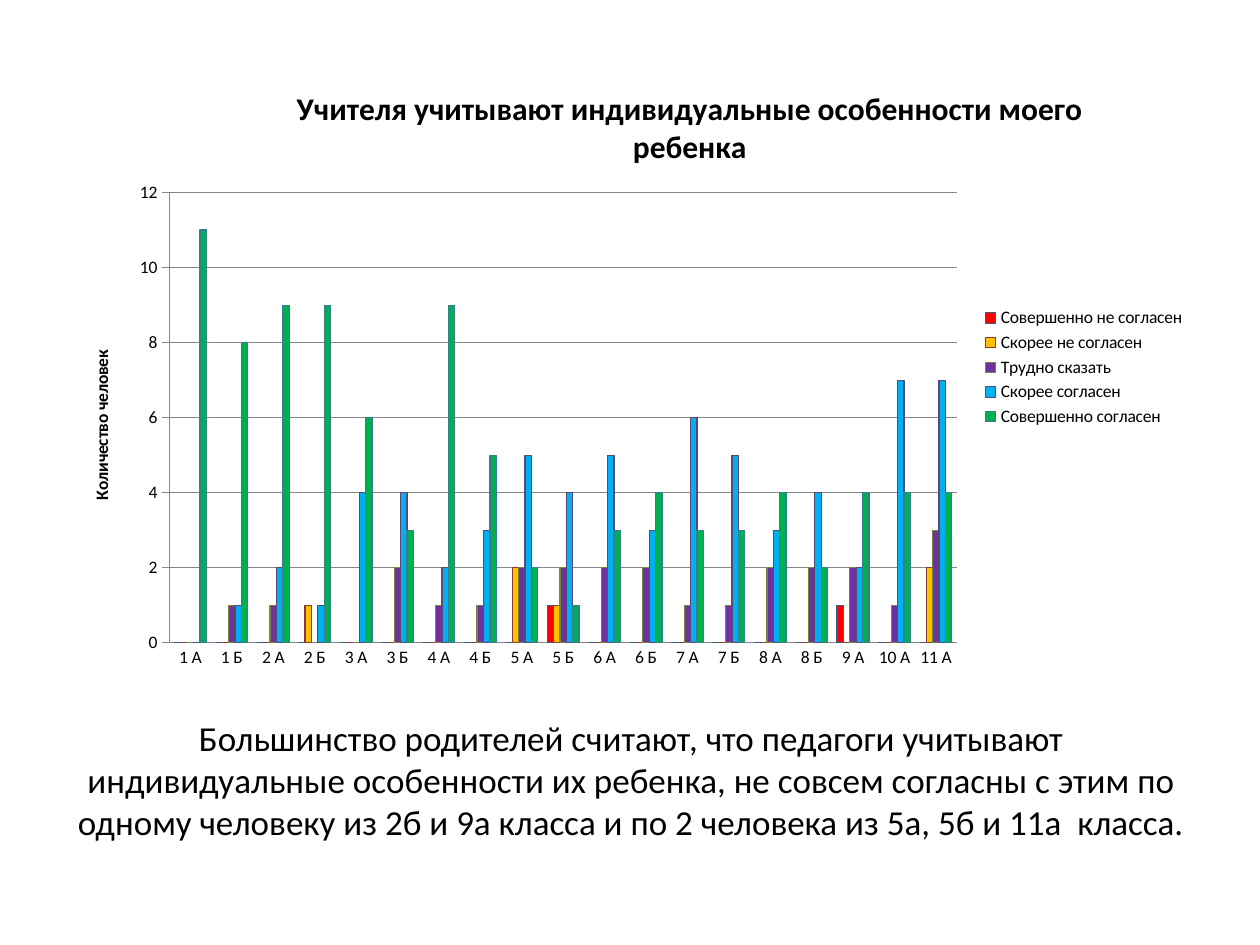
from dataclasses import dataclass

from lxml import etree
from pptx import Presentation
from pptx.chart.data import CategoryChartData
from pptx.dml.color import RGBColor
from pptx.enum.chart import XL_CHART_TYPE, XL_LEGEND_POSITION, XL_TICK_MARK
from pptx.enum.text import MSO_ANCHOR, PP_ALIGN
from pptx.oxml.ns import qn
from pptx.util import Inches, Pt

CLUSTERED = XL_CHART_TYPE.COLUMN_CLUSTERED
LEGEND_RIGHT = XL_LEGEND_POSITION.RIGHT
TICK_NONE, TICK_OUT = XL_TICK_MARK.NONE, XL_TICK_MARK.OUTSIDE
MIDDLE, CENTER = MSO_ANCHOR.MIDDLE, PP_ALIGN.CENTER
FONT = "Calibri"
BLACK, GRAY = "000000", "878787"


@dataclass
class Answer:
    name: str
    counts: tuple
    fill: str
    outline: str


CLASSES = ("1 А", "1 Б", "2 А", "2 Б", "3 А", "3 Б", "4 А", "4 Б", "5 А", "5 Б",
           "6 А", "6 Б", "7 А", "7 Б", "8 А", "8 Б", "9 А", "10 А", "11 А")
ANSWERS = (
    Answer("Совершенно не согласен",
           (0, 0, 0, 0, 0, 0, 0, 0, 0, 1, 0, 0, 0, 0, 0, 0, 1, 0, 0), "FF0000", "385D8A"),
    Answer("Скорее не согласен",
           (0, 0, 0, 1, 0, 0, 0, 0, 2, 1, 0, 0, 0, 0, 0, 0, 0, 0, 2), "FFC000", "8C3836"),
    Answer("Трудно сказать",
           (0, 1, 1, 0, 0, 2, 1, 1, 2, 2, 2, 2, 1, 1, 2, 2, 2, 1, 3), "7030A0", "71893F"),
    Answer("Скорее согласен",
           (0, 1, 2, 1, 4, 4, 2, 3, 5, 4, 5, 3, 6, 5, 3, 4, 2, 7, 7), "00B0F0", "5C4776"),
    Answer("Совершенно согласен",
           (11, 8, 9, 9, 6, 3, 9, 5, 2, 1, 3, 4, 3, 3, 4, 2, 4, 4, 4), "00B050", "357D91"),
)
CONCLUSION = ("Большинство родителей считают, что педагоги учитывают индивидуальные "
              "особенности их ребенка, не совсем согласны с этим по одному человеку из "
              "2б и 9а класса и по 2 человека из 5а, 5б и 11а  класса. ")


def rgb(color: str) -> RGBColor:
    return RGBColor.from_string(color)


def style_font(font, size: float, bold: bool = False) -> None:
    for attribute, value in {"name": FONT, "size": Pt(size), "bold": bold}.items():
        setattr(font, attribute, value)
    font.color.rgb = rgb(BLACK)


def style_line(line, color: str, width: float = 0.75) -> None:
    line.color.rgb = rgb(color)
    line.width = Pt(width)


def set_title(title, text: str, size: float) -> None:
    title.text_frame.text = text
    style_font(title.text_frame.paragraphs[0].runs[0].font, size, bold=True)


def set_layout(parent, index: int, values: dict) -> None:
    """Place a chart part by fractions of the chart area."""
    for old in parent.findall(qn("c:layout")):
        parent.remove(old)
    layout = etree.Element(qn("c:layout"))
    manual = etree.SubElement(layout, qn("c:manualLayout"))
    for tag, value in values.items():
        etree.SubElement(manual, qn(f"c:{tag}")).set("val", str(value))
    parent.insert(index, layout)


def add_survey_chart(slide) -> None:
    data = CategoryChartData(number_format="General")
    data.categories = CLASSES
    for answer in ANSWERS:
        data.add_series(answer.name, answer.counts)
    chart = slide.shapes.add_chart(CLUSTERED, Inches(0.51), Inches(0.44),
                                   Inches(9), Inches(4.95), data).chart
    style_font(chart.font, 10)

    # Title and plot area
    set_title(chart.chart_title, "Учителя учитывают индивидуальные особенности моего ребенка", 18)
    set_layout(chart.chart_title._element, 1,
               {"xMode": "edge", "yMode": "edge", "x": 0.2, "y": 0.04})
    set_layout(chart._chartSpace.chart.plotArea, 0,
               {"layoutTarget": "inner", "xMode": "edge", "yMode": "edge",
                "x": 0.093, "y": 0.22, "w": 0.694, "h": 0.722})

    # Legend
    chart.has_legend = True
    chart.legend.position = LEGEND_RIGHT
    chart.legend.include_in_layout = False
    style_font(chart.legend.font, 10)

    # Axes
    classes, people = chart.category_axis, chart.value_axis
    for axis, tick in ((classes, TICK_NONE), (people, TICK_OUT)):
        axis.major_tick_mark = tick
        axis.minor_tick_mark = TICK_NONE
        style_font(axis.tick_labels.font, 10)
        style_line(axis.format.line, GRAY)
    set_title(people.axis_title, "Количество человек", 10)
    for attribute, value in {"minimum_scale": 0, "maximum_scale": 12, "major_unit": 2}.items():
        setattr(people, attribute, value)
    style_line(people.major_gridlines.format.line, GRAY)

    # Columns
    plot = chart.plots[0]
    plot.gap_width = 150
    plot.overlap = 0
    plot.vary_by_categories = False
    for series, answer in zip(plot.series, ANSWERS):
        series.format.fill.solid()
        series.format.fill.fore_color.rgb = rgb(answer.fill)
        style_line(series.format.line, answer.outline)


def add_conclusion(slide) -> None:
    conclusion = slide.shapes.title
    place = {"left": 0.51, "top": 5.56, "width": 9, "height": 1.25}
    for attribute, value in place.items():
        setattr(conclusion, attribute, Inches(value))
    frame = conclusion.text_frame
    frame.text = CONCLUSION
    frame.word_wrap = True
    frame.vertical_anchor = MIDDLE
    paragraph = frame.paragraphs[0]
    paragraph.alignment = CENTER
    style_font(paragraph.runs[0].font, 20)


def main() -> None:
    deck = Presentation()
    deck.slide_width, deck.slide_height = Inches(10), Inches(7.5)
    slide = deck.slides.add_slide(deck.slide_layouts[5])
    add_conclusion(slide)
    add_survey_chart(slide)
    deck.save("out.pptx")


if __name__ == "__main__":
    main()
